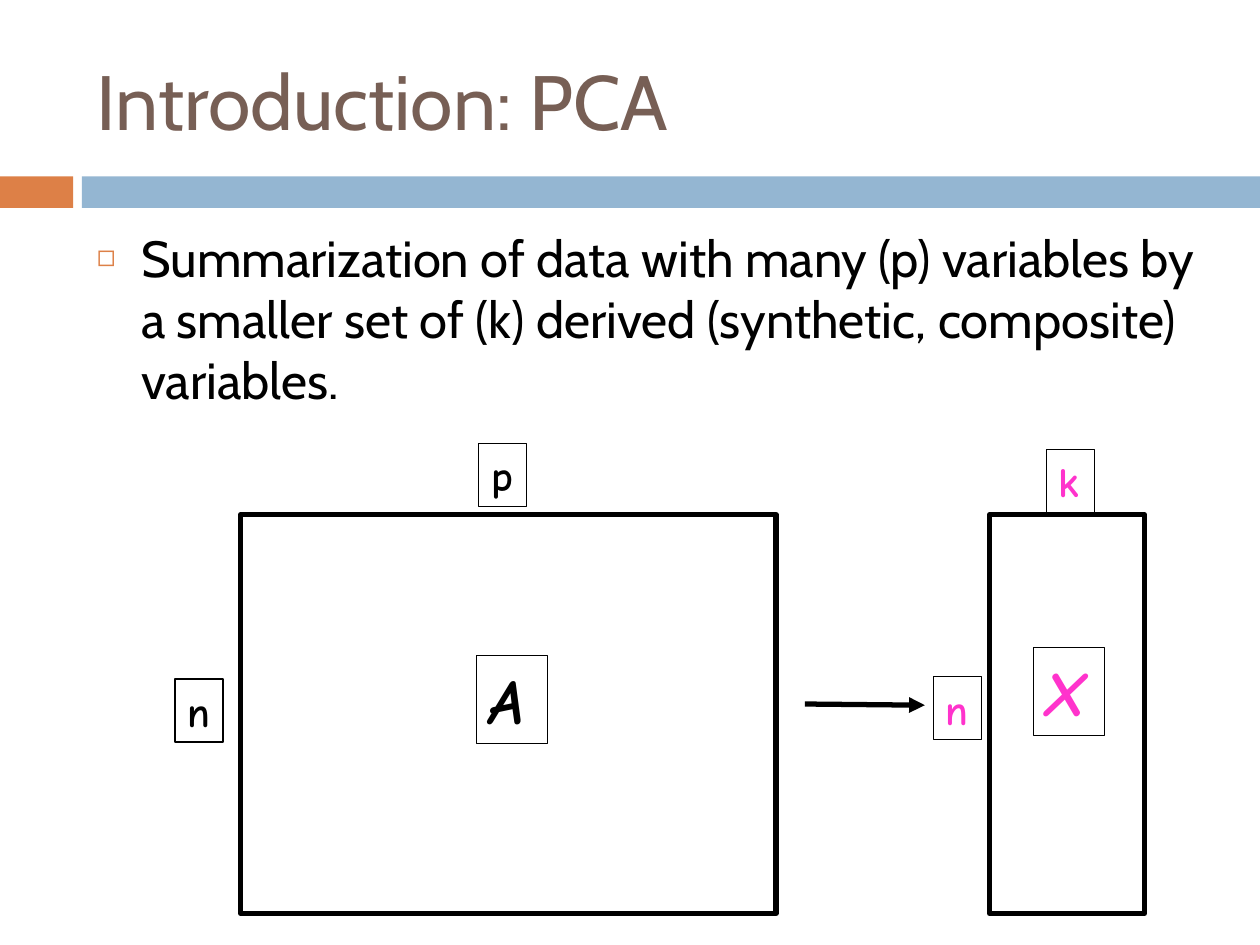
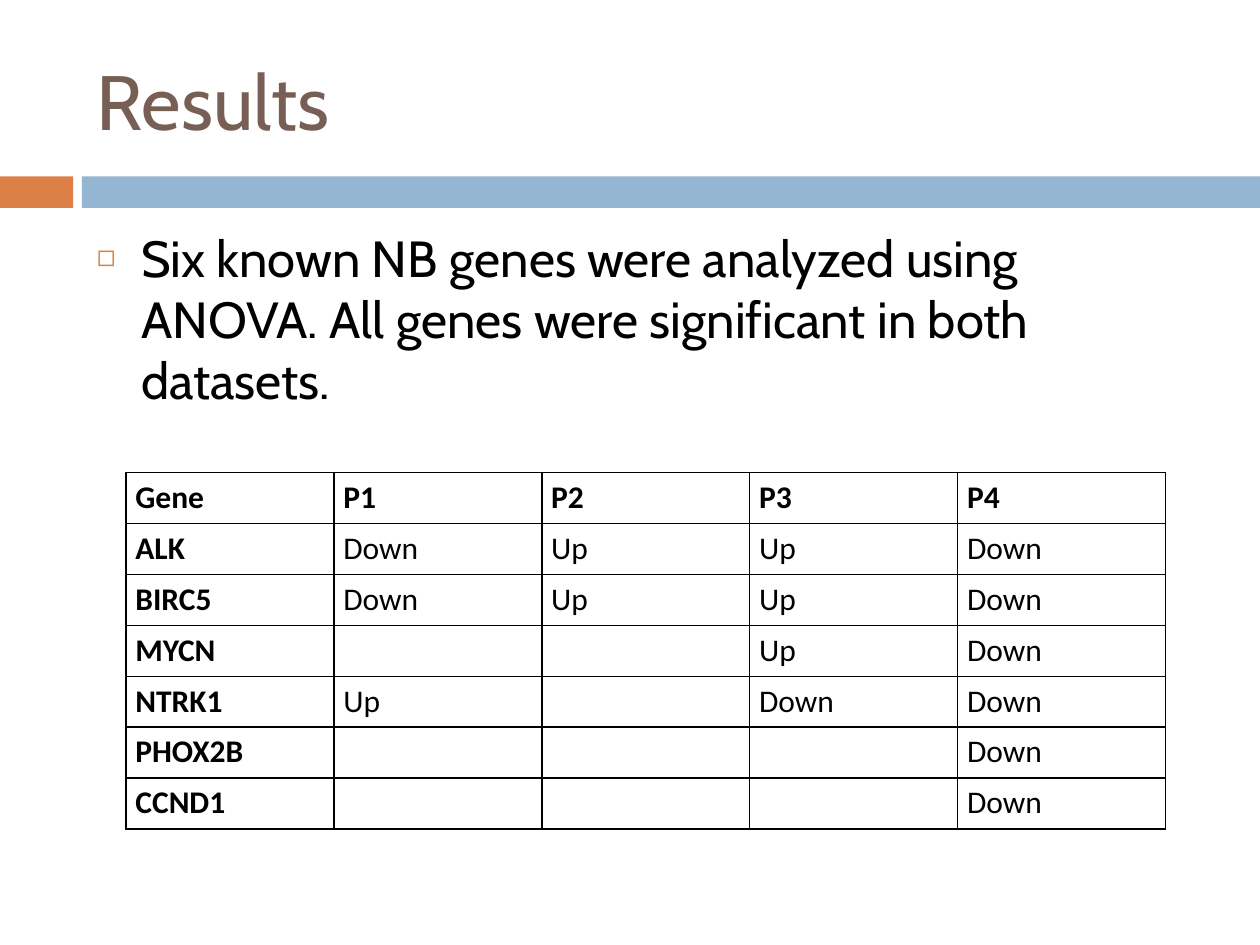
from lxml import etree
from pptx import Presentation
from pptx import util as u
from pptx.dml.color import RGBColor
from pptx.enum import shapes, text
from pptx.oxml import ns

Pt = u.Pt
BLACK, BROWN, ORANGE, BLUE, PINK = "000000", "775F55", "DD8047", "94B6D2", "FF33CC"
HEAD, TABLE, LABEL = "Cabin", "Calibri", "Comic Neue"


def rgb(value):
    return RGBColor.from_string(value)


def sub(parent, tag, **attrs):
    return etree.SubElement(parent, ns.qn(tag), attrs)


class Deck:
    def __init__(self):
        self.prs = Presentation()
        self.prs.slide_width, self.prs.slide_height = Pt(720), Pt(540)
        self.s = None

    def run(self, p, words, font, size, color=BLACK, bold=False, italic=False):
        r = p.add_run()
        r.text = words
        f = r.font
        f.name, f.size, f.bold, f.italic = font, Pt(size), bold, italic
        f.color.rgb = rgb(color)

    def slide(self, title, bullet):
        self.s = self.prs.slides.add_slide(self.prs.slide_layouts[1])
        self.rect(0, 100.8, 41.8, 18, fill=ORANGE)
        self.rect(46.8, 100.8, 673.2, 18, fill=BLUE)
        p = self.placeholder(0, 18, 78, text.MSO_ANCHOR.MIDDLE)
        self.run(p, title, HEAD, 44, BROWN)
        p = self.placeholder(1, 126, 354, text.MSO_ANCHOR.TOP)
        p.space_before = Pt(7)
        pPr = p._p.get_or_add_pPr()
        pPr.set("marL", str(Pt(25.2)))
        pPr.set("indent", str(Pt(-25.2)))
        sub(sub(pPr, "a:buClr"), "a:srgbClr", val=ORANGE)
        sub(pPr, "a:buSzPct", val="60000")
        sub(pPr, "a:buChar", char="◻")
        self.run(p, bullet, HEAD, 29)

    def placeholder(self, idx, y, h, anchor):
        sp = self.s.placeholders[idx]
        sp.left, sp.top, sp.width, sp.height = Pt(48.2), Pt(y), Pt(642.2), Pt(h)
        tf = sp.text_frame
        tf.auto_size, tf.vertical_anchor = text.MSO_AUTO_SIZE.NONE, anchor
        p = tf.paragraphs[0]
        p.alignment = text.PP_ALIGN.LEFT
        return p

    def rect(self, x, y, w, h, fill=None, line=None):
        sp = self.s.shapes.add_shape(
            shapes.MSO_SHAPE.RECTANGLE, Pt(x), Pt(y), Pt(w), Pt(h))
        sp.shadow.inherit = False
        if fill:
            sp.fill.solid()
            sp.fill.fore_color.rgb = rgb(fill)
        else:
            sp.fill.background()
        if line:
            sp.line.color.rgb = rgb(BLACK)
            sp.line.width = Pt(line)
        else:
            sp.line.fill.background()
        return sp

    def label(self, x, y, letter, color, big=False):
        w, h, size = (40.7, 50.4, 36) if big else (27.4, 36, 24)
        tf = self.rect(x, y, w, h, line=0.75).text_frame
        tf.word_wrap = False
        tf.auto_size = text.MSO_AUTO_SIZE.SHAPE_TO_FIT_TEXT
        tf.vertical_anchor = text.MSO_ANCHOR.TOP
        p = tf.paragraphs[0]
        p.alignment = text.PP_ALIGN.LEFT
        self.run(p, letter, LABEL, size, color, bold=True, italic=big)

    def arrow(self, x1, y1, x2, y2):
        c = self.s.shapes.add_connector(
            shapes.MSO_CONNECTOR.STRAIGHT, Pt(x1), Pt(y1), Pt(x2), Pt(y2))
        c.line.color.rgb = rgb(BLACK)
        c.line.width = Pt(3)
        sub(c.line._get_or_add_ln(), "a:tailEnd", type="triangle")
        sub(c._element.spPr, "a:effectLst")

    def borders(self, cell):
        tcPr = cell._tc.get_or_add_tcPr()
        for i, side in enumerate(("a:lnL", "a:lnR", "a:lnT", "a:lnB")):
            ln = sub(tcPr, side, w=str(Pt(1)))
            sub(sub(ln, "a:solidFill"), "a:srgbClr", val=BLACK)
            tcPr.insert(i, ln)

    def table(self, x, y, col_w, row_h, rows):
        n, m = len(rows), len(rows[0])
        tbl = self.s.shapes.add_table(
            n, m, Pt(x), Pt(y), Pt(col_w * m), Pt(row_h * n)).table
        tbl.first_row = tbl.horz_banding = False
        for col in tbl.columns:
            col.width = Pt(col_w)
        for i, row in enumerate(rows):
            tbl.rows[i].height = Pt(row_h)
            for j, words in enumerate(row):
                cell = tbl.cell(i, j)
                cell.fill.background()
                self.borders(cell)
                cell.margin_left = cell.margin_right = Pt(5.4)
                cell.margin_top = cell.margin_bottom = 0
                if words:
                    p = cell.text_frame.paragraphs[0]
                    p.alignment, p.line_spacing = text.PP_ALIGN.JUSTIFY, 1.15
                    self.run(p, words, TABLE, 18, bold=i == 0 or j == 0)


def main():
    d = Deck()
    d.slide("Introduction: PCA",
            "Summarization of data with many (p) variables by a smaller set of (k) "
            "derived (synthetic, composite) variables.")
    d.arrow(460, 402.3, 528.5, 403)
    d.rect(137.5, 294.2, 306, 227.8, line=3)
    d.label(100, 388, "n", BLACK)
    d.label(273.6, 253.3, "p", BLACK)
    d.label(272.4, 374.6, "A", BLACK, big=True)
    d.rect(565.5, 294.2, 88.5, 227.8, line=3)
    d.label(533.4, 386.8, "n", PINK)
    d.label(597.9, 257, "k", PINK)
    d.label(590.6, 370, "X", PINK, big=True)

    d.slide("Results",
            "Six known NB genes were analyzed using ANOVA. "
            "All genes were significant in both datasets.")
    d.table(72, 270, 118.8, 29.14, [
        ("Gene", "P1", "P2", "P3", "P4"),
        ("ALK", "Down", "Up", "Up", "Down"),
        ("BIRC5", "Down", "Up", "Up", "Down"),
        ("MYCN", "", "", "Up", "Down"),
        ("NTRK1", "Up", "", "Down", "Down"),
        ("PHOX2B", "", "", "", "Down"),
        ("CCND1", "", "", "", "Down"),
    ])
    d.prs.save("out.pptx")


if __name__ == "__main__":
    main()
